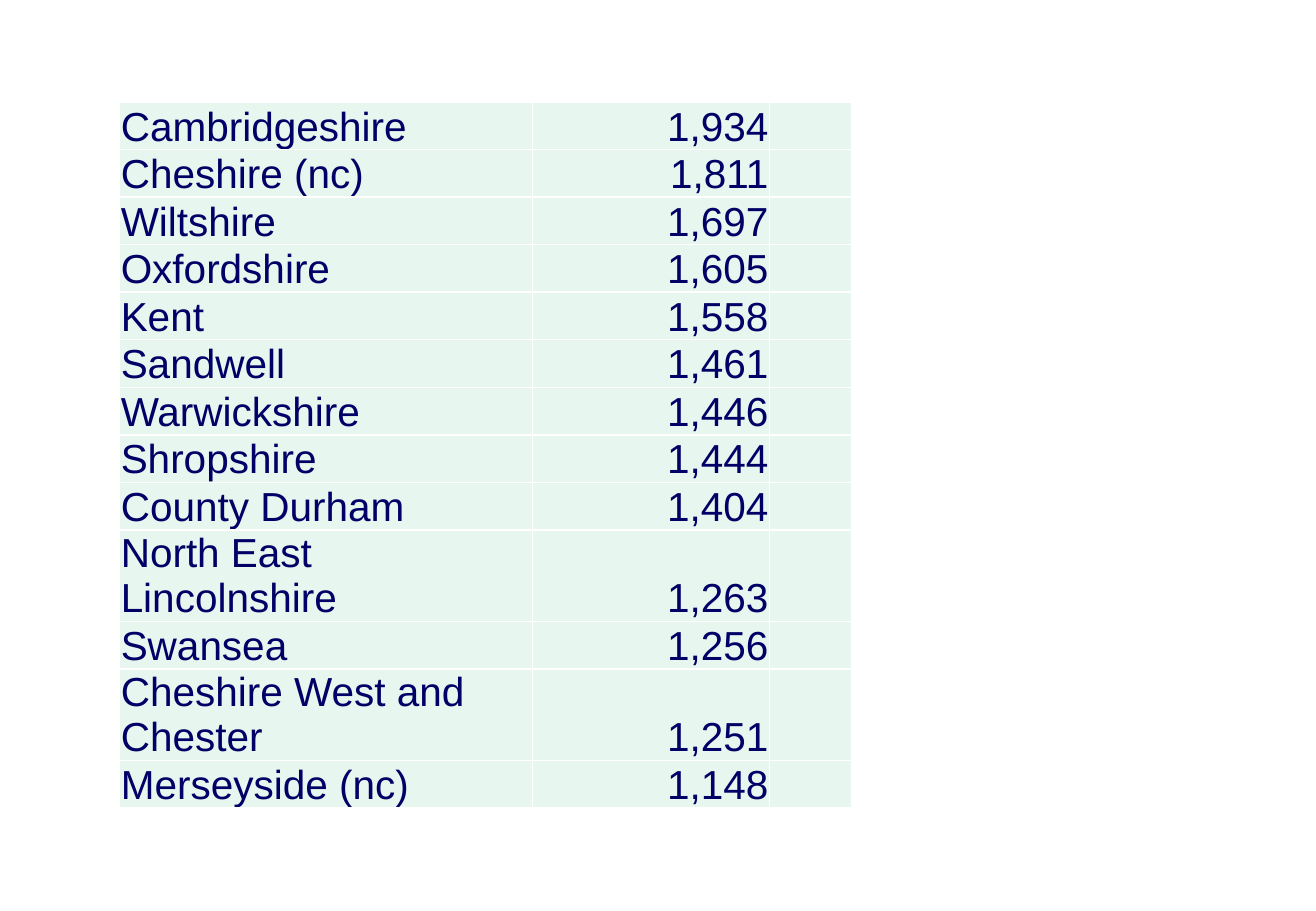
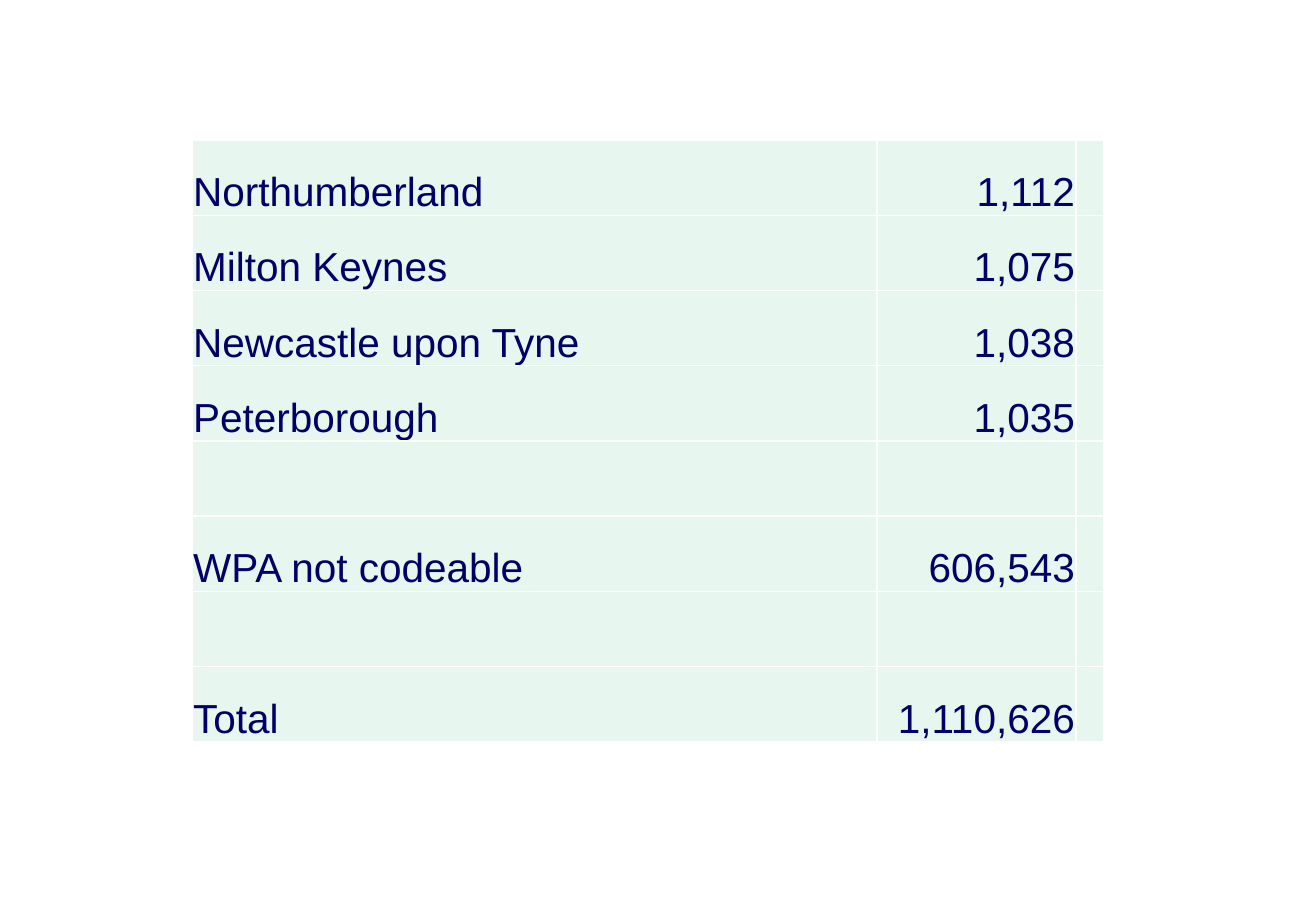
from lxml import etree
from pptx import Presentation
from pptx.dml.color import RGBColor
from pptx.enum.text import MSO_ANCHOR, PP_ALIGN
from pptx.oxml.ns import qn
from pptx.util import Pt

BOTTOM = MSO_ANCHOR.BOTTOM
LEFT, RIGHT = PP_ALIGN.LEFT, PP_ALIGN.RIGHT
COLORS = {"text": "000066", "cell": "E7F6EF", "border": "FFFFFF"}
FONT, SIZE = "Arial", Pt(24)
INSET = Pt(0.7)

TABLES = [
    {
        "at": (70.9, 60.5), "cols": (244.8, 140.4, 49), "row": 28.2,
        "rows": [
            ("Cambridgeshire", "1,934"),
            ("Cheshire (nc)", "1,811"),
            ("Wiltshire", "1,697"),
            ("Oxfordshire", "1,605"),
            ("Kent", "1,558"),
            ("Sandwell", "1,461"),
            ("Warwickshire", "1,446"),
            ("Shropshire", "1,444"),
            ("County Durham", "1,404"),
            ("North East Lincolnshire", "1,263"),
            ("Swansea", "1,256"),
            ("Cheshire West and Chester", "1,251"),
            ("Merseyside (nc)", "1,148"),
        ],
    },
    {
        "at": (113.8, 83), "cols": (406, 118, 16.6), "row": 44.6,
        "rows": [
            ("Northumberland", "1,112"),
            ("Milton Keynes", "1,075"),
            ("Newcastle upon Tyne", "1,038"),
            ("Peterborough", "1,035"),
            ("", ""),
            ("WPA not codeable", "606,543"),
            ("", ""),
            ("Total", "1,110,626"),
        ],
    },
]


def format_cell(cell):
    """Give a cell its insets, white borders and fill."""
    cell.vertical_anchor = BOTTOM
    cell.margin_left = cell.margin_right = cell.margin_top = INSET
    cell.margin_bottom = 0
    tcPr = cell._tc.get_or_add_tcPr()
    for side in ("a:lnL", "a:lnR", "a:lnT", "a:lnB"):
        ln = etree.SubElement(tcPr, qn(side), w=str(Pt(1)))
        fill = etree.SubElement(ln, qn("a:solidFill"))
        etree.SubElement(fill, qn("a:srgbClr"), val=COLORS["border"])
    cell.fill.solid()
    cell.fill.fore_color.rgb = RGBColor.from_string(COLORS["cell"])


prs = Presentation()
prs.slide_width, prs.slide_height = Pt(780), Pt(540)
blank = prs.slide_layouts[6]

for data in TABLES:
    s = prs.slides.add_slide(blank)
    rows, cols = data["rows"], data["cols"]
    left, top = data["at"]
    table = s.shapes.add_table(len(rows), len(cols), Pt(left), Pt(top),
                               Pt(sum(cols)), Pt(data["row"] * len(rows))).table
    table.first_row = table.horz_banding = False
    for column, width in zip(table.columns, cols):
        column.width = Pt(width)
    for row, texts in zip(table.rows, rows):
        row.height = Pt(data["row"])
        for cell in row.cells:
            format_cell(cell)
        for cell, text, align in zip(row.cells, texts, (LEFT, RIGHT)):
            if not text:
                continue
            p = cell.text_frame.paragraphs[0]
            p.text = text
            p.alignment = align
            p.font.name, p.font.size = FONT, SIZE
            p.font.color.rgb = RGBColor.from_string(COLORS["text"])

prs.save("out.pptx")
